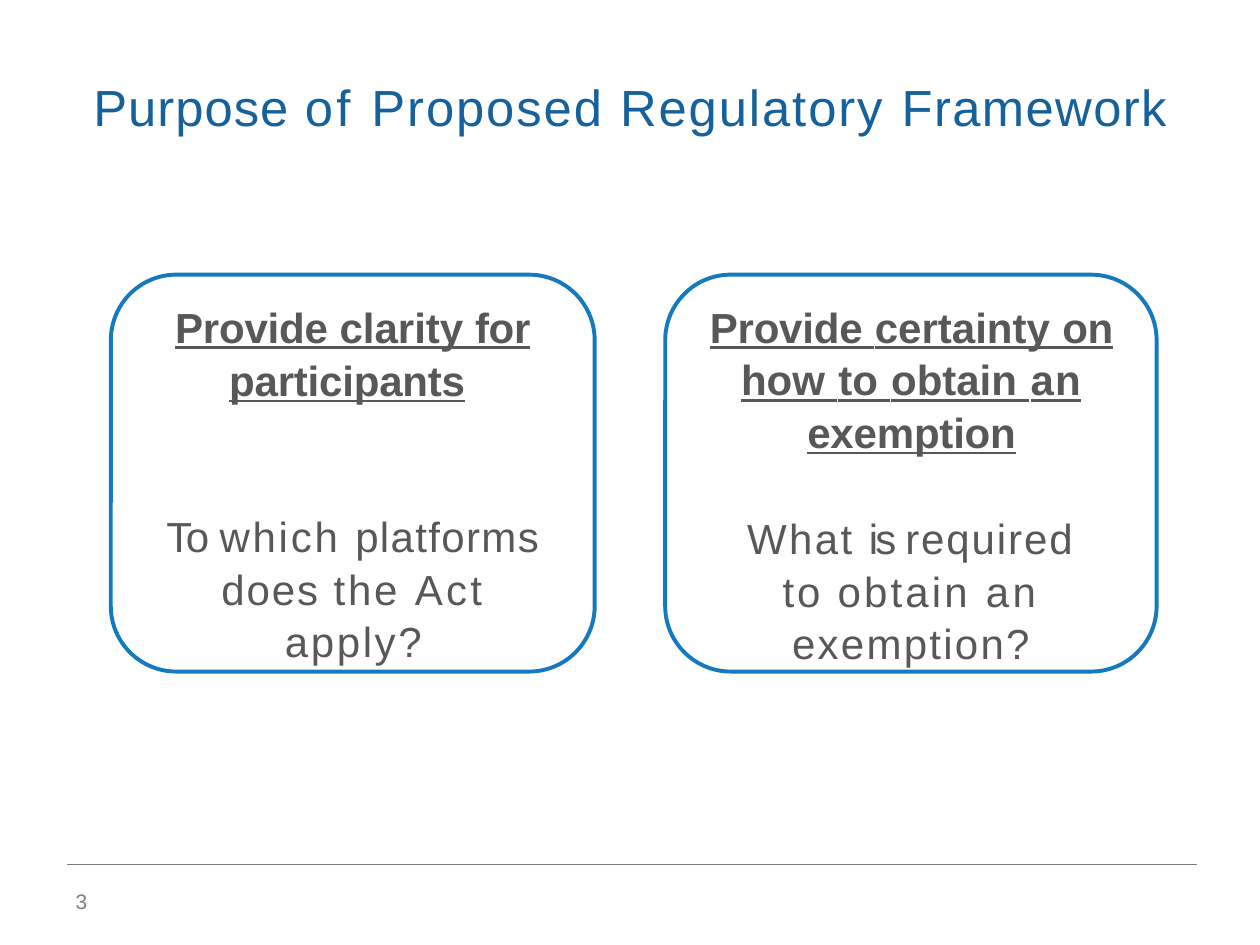
"""Build the slide on the purpose of the proposed regulatory framework."""
from dataclasses import dataclass

import pptx
import pptx.dml.color
import pptx.enum.shapes
import pptx.enum.text
import pptx.oxml
import pptx.util
from pptx.util import Inches

ALIGN = pptx.enum.text.PP_ALIGN


@dataclass(frozen=True)
class Theme:
    font: str = "Arial"
    title: str = "16619B"
    border: str = "1579C0"
    body: str = "585858"
    muted: str = "7E7E7E"
    title_size: float = 29
    body_size: float = 24
    number_size: float = 12


@dataclass(frozen=True)
class Run:
    text: str
    spacing: float = 0
    underline: bool = True


@dataclass(frozen=True)
class Para:
    runs: list[Run]
    heading: bool = False
    before: float = 0
    left: float = 0
    right: float = 0


@dataclass(frozen=True)
class Card:
    left: float
    width: float
    text_left: float
    text_width: float
    paras: list[Para]


THEME = Theme()
CARD_TOP, CARD_HEIGHT, CORNER = 2.18, 3.15, 0.52
TEXT_TOP, TEXT_HEIGHT = 2.36, 2.83

CARDS = [
    Card(0.88, 3.84, 1.28, 3.04, [
        Para([Run("Provide", -0.1), Run(" ", -0.5), Run("clarity"),
              Run(" ", -0.5), Run("for", -0.2)], heading=True),
        Para([Run("participants", -0.1)], heading=True, before=0.1, right=0.09),
        Para([Run("To ", -0.8), Run("which ", 1.6), Run("platforms ", 0.8),
              Run("does ", 1.1), Run("the ", 1.6), Run("Act ", 1.9),
              Run("apply?", 1.5)], before=59, left=0.01),
    ]),
    Card(5.28, 3.9, 5.6, 3.26, [
        Para([Run("Provide", -0.1), Run(" ", 0.3), Run("certainty"), Run(" ", 0.4),
              Run("on", -0.2), Run(" ", -0.2, False), Run("how"), Run(" ", 1),
              Run("to"), Run(" ", 0.8), Run("obtain"), Run(" ", 1),
              Run("an", 0.7), Run(" ", 0.7, False), Run("exemption", -0.1)],
             heading=True, left=0.01),
        Para([Run("What ", 1.4), Run("is ", -1.6), Run("required ", 1.1),
              Run("to ", 1.6), Run("obtain ", 1.8), Run("an ", 1.9),
              Run("exemption?", 1.3)], before=30, left=0.12, right=0.12),
    ]),
]


def rgb(value: str) -> pptx.dml.color.RGBColor:
    """Turn a hex string into a colour."""
    return pptx.dml.color.RGBColor.from_string(value)


def add_text(s, box: tuple, paras: list[Para], size: float, color: str,
             align=ALIGN.LEFT, line_spacing: float = 1, top: float = 0.01) -> None:
    """Add a text box and fill it run by run."""
    tf = s.shapes.add_textbox(*map(Inches, box)).text_frame
    tf.word_wrap = True
    tf.margin_left = tf.margin_right = tf.margin_bottom = 0
    tf.margin_top = Inches(top)
    for i, para in enumerate(paras):
        p = tf.paragraphs[0] if i == 0 else tf.add_paragraph()
        p.alignment = align
        p.line_spacing = line_spacing
        p.space_before = pptx.util.Pt(para.before)
        ppr = p._p.get_or_add_pPr()
        ppr.set("marL", str(Inches(para.left)))
        ppr.set("marR", str(Inches(para.right)))
        for run in para.runs:
            r = p.add_run()
            r.text = run.text
            r.font.name = THEME.font
            r.font.size = pptx.util.Pt(size)
            r.font.color.rgb = rgb(color)
            r.font.bold = para.heading
            r.font.underline = para.heading and run.underline
            r._r.get_or_add_rPr().set("spc", str(round(run.spacing * 100)))


def add_divider(s, left: float, right: float, y: float) -> None:
    """Draw the thin rule above the page number."""
    line = s.shapes.add_connector(pptx.enum.shapes.MSO_CONNECTOR.STRAIGHT,
                                  Inches(left), Inches(y), Inches(right), Inches(y))
    line.line.color.rgb = rgb(THEME.muted)
    line.line.width = pptx.util.Pt(0.25)
    line._element.spPr.append(pptx.oxml.parse_xml(
        '<a:effectLst xmlns:a="http://schemas.openxmlformats.org/drawingml/2006/main"/>'))


def add_card(s, card: Card) -> None:
    """Draw one rounded outline with its heading and question."""
    sp = s.shapes.add_shape(pptx.enum.shapes.MSO_SHAPE.ROUNDED_RECTANGLE,
                            Inches(card.left), Inches(CARD_TOP),
                            Inches(card.width), Inches(CARD_HEIGHT))
    sp.adjustments[0] = CORNER / CARD_HEIGHT
    sp.shadow.inherit = False
    sp.fill.background()
    sp.line.color.rgb = rgb(THEME.border)
    sp.line.width = pptx.util.Pt(2.25)
    add_text(s, (card.text_left, TEXT_TOP, card.text_width, TEXT_HEIGHT), card.paras,
             THEME.body_size, THEME.body, ALIGN.CENTER, 1.05)


def main() -> None:
    """Assemble and save the slide."""
    prs = pptx.Presentation()
    prs.slide_width, prs.slide_height = Inches(10), Inches(7.5)
    s = prs.slides.add_slide(prs.slide_layouts[6])
    add_divider(s, 0.53, 9.5, 6.86)
    title = [Run("Purpose ", 0.6), Run("of ", 1.9),
             Run("Proposed Regulatory ", 1.1), Run("Framework", 0.8)]
    add_text(s, (0.59, 0.32, 8.69, 1.01), [Para(title, left=0.15)],
             THEME.title_size, THEME.title, top=0.28)
    for card in CARDS:
        add_card(s, card)
    add_text(s, (0.56, 7.03, 0.28, 0.23), [Para([Run("3", -0.2)], left=0.04)],
             THEME.number_size, THEME.muted, top=0.02)
    prs.save("out.pptx")


if __name__ == "__main__":
    main()
